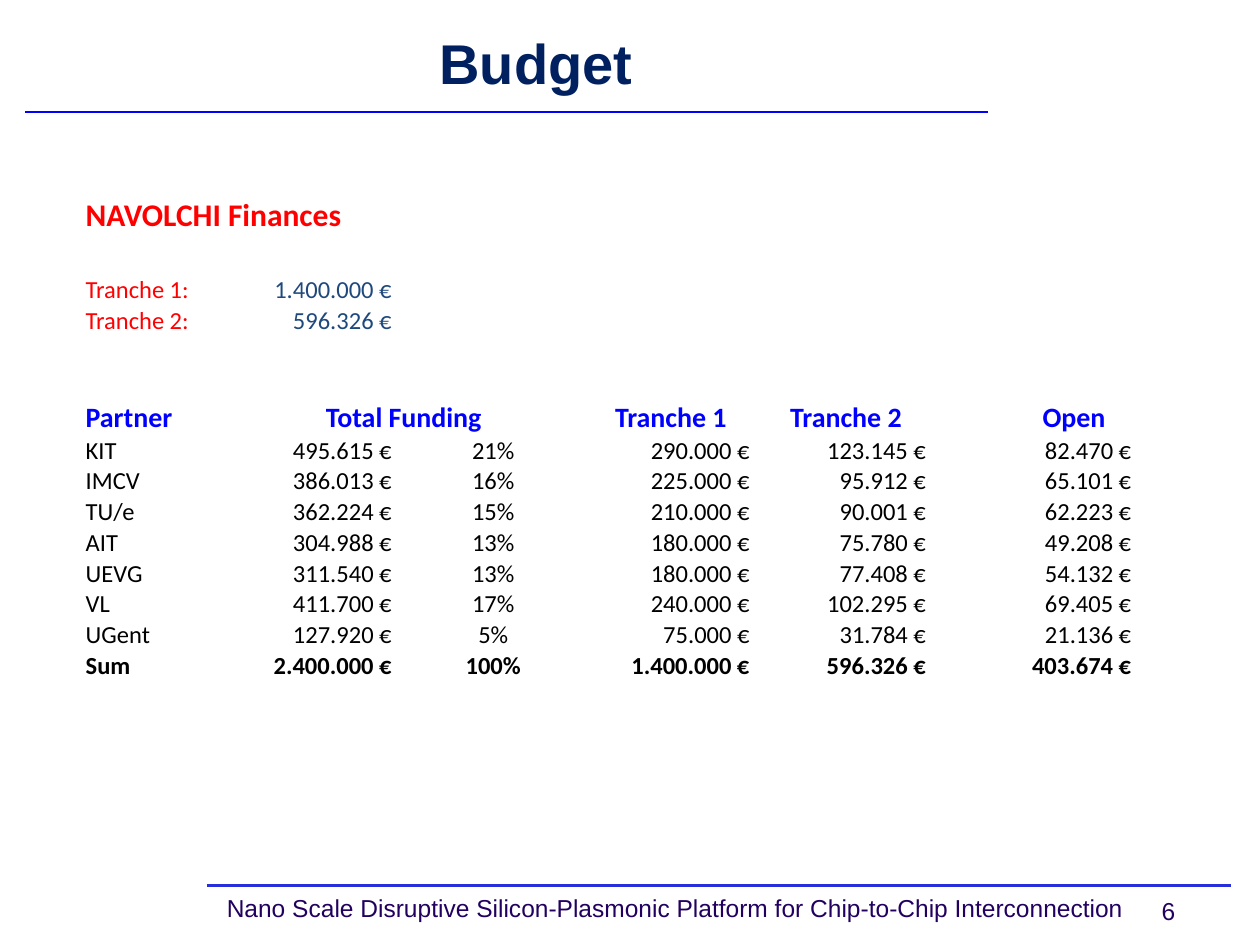
from lxml import etree
from pptx import Presentation
from pptx.dml.color import RGBColor
from pptx.enum.shapes import MSO_CONNECTOR
from pptx.enum.text import MSO_ANCHOR, PP_ALIGN
from pptx.oxml.ns import qn
from pptx.util import Inches, Pt

LEFT, CENTER, RIGHT = PP_ALIGN.LEFT, PP_ALIGN.CENTER, PP_ALIGN.RIGHT
MIDDLE, BOTTOM = MSO_ANCHOR.MIDDLE, MSO_ANCHOR.BOTTOM
STRAIGHT = MSO_CONNECTOR.STRAIGHT

COLORS = {
    "title": "002060",
    "title_rule": "0000FF",
    "footer": "220060",
    "footer_rule": "262FDA",
    "accent": "FF0000",
    "amount": "1F497D",
    "header": "0000FF",
    "body": "000000",
}

COLUMN_WIDTHS = [1.11, 1.42, 1.43, 1.39, 1.39, 0.56, 1.11]
ROW_HEIGHTS = [0.3, 0.31] + [0.25] * 4 + [0.28] + [0.24] * 8
AMOUNT_MARGINS = {1: 0.09, 3: 0.07, 4: 0.06, 6: 0.1}
HEADER_ROW = 6

TRANCHES = [("Tranche 1:", "1.400.000 €"), ("Tranche 2:", "596.326 €")]
HEADERS = {0: "Partner", 1: "Total Funding", 3: "Tranche 1", 4: "Tranche 2", 6: "Open"}
PARTNERS = [
    ("KIT", "495.615 €", "21%", "290.000 €", "123.145 €", "", "82.470 €"),
    ("IMCV", "386.013 €", "16%", "225.000 €", "95.912 €", "", "65.101 €"),
    ("TU/e", "362.224 €", "15%", "210.000 €", "90.001 €", "", "62.223 €"),
    ("AIT", "304.988 €", "13%", "180.000 €", "75.780 €", "", "49.208 €"),
    ("UEVG", "311.540 €", "13%", "180.000 €", "77.408 €", "", "54.132 €"),
    ("VL", "411.700 €", "17%", "240.000 €", "102.295 €", "", "69.405 €"),
    ("UGent", "127.920 €", "5%", "75.000 €", "31.784 €", "", "21.136 €"),
    ("Sum", "2.400.000 €", "100%", "1.400.000 €", "596.326 €", "", "403.674 €"),
]


def write_text(frame, text, size=14, color="body", font="Calibri", bold=False,
               align=LEFT, spacing=None):
    paragraph = frame.paragraphs[0]
    paragraph.alignment = align
    paragraph.line_spacing = spacing
    run = paragraph.add_run()
    run.text = text
    run.font.size = Pt(size)
    run.font.name = font
    run.font.bold = bold
    run.font.color.rgb = RGBColor.from_string(COLORS[color])


def clear_margins(frame):
    frame.margin_left = frame.margin_right = 0
    frame.margin_top = frame.margin_bottom = 0


def add_rule(slide, left, top, width, color):
    rule = slide.shapes.add_connector(
        STRAIGHT, Inches(left), Inches(top), Inches(left + width), Inches(top))
    rule.line.color.rgb = RGBColor.from_string(COLORS[color])
    rule.line.width = Pt(1.5)
    etree.SubElement(rule._element.spPr, qn("a:effectLst"))


def add_footer_text(slide, text, left, top, width, height, spacing=None):
    box = slide.shapes.add_textbox(
        Inches(left), Inches(top), Inches(width), Inches(height))
    clear_margins(box.text_frame)
    box.text_frame.word_wrap = False
    write_text(box.text_frame, text, color="footer", font="Arial", spacing=spacing)


def add_footer(slide, left, top, width):
    add_rule(slide, left, top, width, "footer_rule")
    add_footer_text(
        slide,
        "Nano Scale Disruptive Silicon-Plasmonic Platform for Chip-to-Chip Interconnection",
        left + 0.16, top + 0.08, 7.14, 0.21, spacing=0.9)
    add_footer_text(slide, "6", left + 7.58, top + 0.08, 0.39, 0.23)


def add_title(slide, left, top, width, height):
    add_rule(slide, left, top + height + 0.02, 7.64, "title_rule")
    title = slide.shapes.title
    title.left, title.top = Inches(left), Inches(top)
    title.width, title.height = Inches(width), Inches(height)
    clear_margins(title.text_frame)
    title.text_frame.vertical_anchor = MIDDLE
    write_text(title.text_frame, "Budget", size=32, color="title", font="Arial",
               bold=True, align=CENTER, spacing=Pt(32))


def prepare_cell(cell):
    cell.fill.background()
    cell.vertical_anchor = BOTTOM
    cell.margin_left = cell.margin_right = cell.margin_top = Inches(0.01)
    cell.margin_bottom = 0
    paragraph = cell.text_frame.paragraphs[0]
    etree.SubElement(paragraph._p, qn("a:endParaRPr"), sz="1000")


def write_amount(cell, text, column, **style):
    cell.margin_right = Inches(AMOUNT_MARGINS[column])
    write_text(cell.text_frame, text, align=RIGHT, **style)


def write_partner(table, row, values):
    bold = values[0] == "Sum"
    for column, value in enumerate(values):
        cell = table.cell(row, column)
        if column in AMOUNT_MARGINS:
            write_amount(cell, value, column, bold=bold)
        elif value:
            write_text(cell.text_frame, value, bold=bold,
                       align=CENTER if column else LEFT)


def add_finances(slide, left, top):
    frame = slide.shapes.add_table(
        len(ROW_HEIGHTS), len(COLUMN_WIDTHS), Inches(left), Inches(top),
        Inches(sum(COLUMN_WIDTHS)), Inches(sum(ROW_HEIGHTS)))
    table = frame.table
    table.first_row = table.horz_banding = False
    for column, width in zip(table.columns, COLUMN_WIDTHS):
        column.width = Inches(width)
    for row, height in zip(table.rows, ROW_HEIGHTS):
        row.height = Inches(height)
    for cell in table.iter_cells():
        prepare_cell(cell)

    table.cell(0, 0).merge(table.cell(0, 1))
    write_text(table.cell(0, 0).text_frame, "NAVOLCHI Finances", size=18,
               color="accent", bold=True)
    for row, (label, amount) in enumerate(TRANCHES, start=2):
        write_text(table.cell(row, 0).text_frame, label, color="accent")
        write_amount(table.cell(row, 1), amount, 1, color="amount")

    table.cell(HEADER_ROW, 1).merge(table.cell(HEADER_ROW, 2))
    for column, text in HEADERS.items():
        write_text(table.cell(HEADER_ROW, column).text_frame, text, size=16,
                   color="header", bold=True, align=CENTER if column else LEFT)
    for row, values in enumerate(PARTNERS, start=HEADER_ROW + 1):
        write_partner(table, row, values)


def main():
    presentation = Presentation()
    presentation.slide_width = Inches(10)
    presentation.slide_height = Inches(7.5)
    slide = presentation.slides.add_slide(presentation.slide_layouts[5])
    add_footer(slide, 1.64, 7.03, 8.13)
    add_title(slide, 0.2, 0.2, 8.11, 0.67)
    add_finances(slide, 0.67, 1.55)
    presentation.save("out.pptx")


if __name__ == "__main__":
    main()
